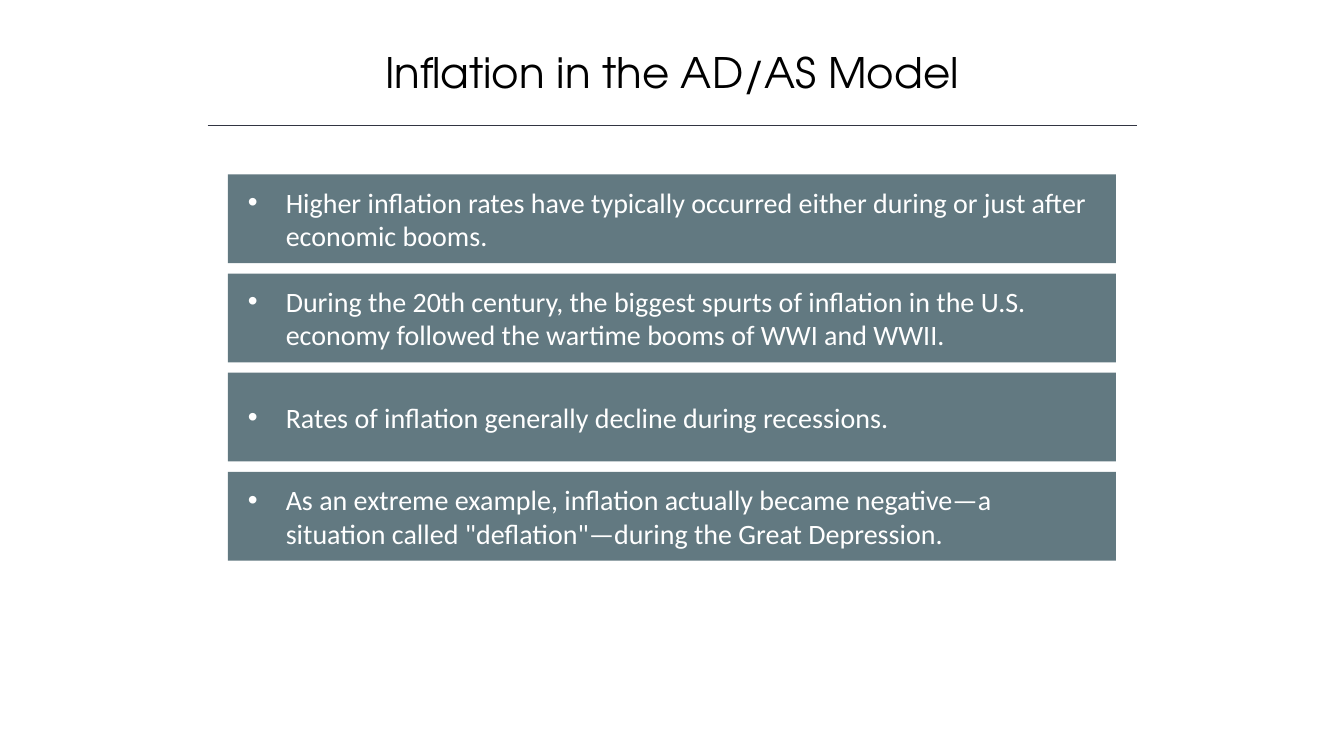
from lxml.etree import SubElement
from pptx import Presentation
from pptx.dml.color import RGBColor
from pptx.enum.shapes import MSO_CONNECTOR, MSO_SHAPE
from pptx.enum.text import MSO_ANCHOR, PP_ALIGN
from pptx.oxml.ns import qn
from pptx.util import Pt

COLORS = {"title": "000000", "rule": "323542", "bar": "627981", "bar_text": "FFFFFF"}

POINTS = [
    "Higher inflation rates have typically occurred either during or just after economic booms.",
    "During the 20th century, the biggest spurts of inflation in the U.S. economy "
    "followed the wartime booms of WWI and WWII.",
    "Rates of inflation generally decline during recessions.",
    "As an extreme example, inflation actually became negative—a situation called "
    "\"deflation\"—during the Great Depression.",
]

BAR_LEFT, BAR_TOP, BAR_WIDTH, BAR_HEIGHT = 162.7, 124.6, 634.3, 63.4
BAR_PITCH = 70.8
BULLET_INDENT = 27


def color(name):
    return RGBColor.from_string(COLORS[name])


def write_text(box, text, *, font, size, fill, align, anchor, insets):
    """Fill a box with one formatted paragraph; insets are left, top, right, bottom."""
    frame = box.text_frame
    frame.word_wrap = True
    frame.vertical_anchor = anchor
    frame.margin_left, frame.margin_top, frame.margin_right, frame.margin_bottom = map(Pt, insets)
    para = frame.paragraphs[0]
    para.alignment = align
    span = para.add_run()
    span.text = text
    span.font.name = font
    span.font.size = Pt(size)
    span.font.color.rgb = color(fill)
    return para


def add_bullet(para):
    properties = para._p.get_or_add_pPr()
    properties.set("marL", str(Pt(BULLET_INDENT)))
    properties.set("indent", str(-Pt(BULLET_INDENT)))
    SubElement(properties, qn("a:buFont"), typeface="Arial")
    SubElement(properties, qn("a:buChar"), char="•")


def set_title(page, text):
    title = page.shapes.title
    title.left, title.top, title.width, title.height = Pt(123.8), Pt(29.5), Pt(712.8), Pt(43.9)
    write_text(title, text, font="TeX Gyre Adventor", size=30, fill="title",
               align=PP_ALIGN.CENTER, anchor=MSO_ANCHOR.TOP, insets=(3.6, 3.6, 3.6, 3.6))


def add_rule(page, left, right, top):
    rule = page.shapes.add_connector(MSO_CONNECTOR.STRAIGHT, Pt(left), Pt(top), Pt(right), Pt(top))
    rule.line.color.rgb = color("rule")
    rule.line.width = Pt(1)
    SubElement(rule._element.spPr, qn("a:effectLst"))


def add_bar(page, text, top):
    bar = page.shapes.add_shape(MSO_SHAPE.RECTANGLE, Pt(BAR_LEFT), Pt(top),
                                Pt(BAR_WIDTH), Pt(BAR_HEIGHT))
    bar.shadow.inherit = False
    bar.fill.solid()
    bar.fill.fore_color.rgb = color("bar")
    bar.line.fill.background()
    para = write_text(bar, text, font="Calibri", size=20, fill="bar_text",
                      align=PP_ALIGN.LEFT, anchor=MSO_ANCHOR.MIDDLE, insets=(14.4, 3.6, 20, 3.6))
    add_bullet(para)


def main():
    deck = Presentation()
    deck.slide_width, deck.slide_height = Pt(960), Pt(540)
    page = deck.slides.add_slide(deck.slide_layouts.get_by_name("Title Only"))

    # Heading
    set_title(page, "Inflation in the AD/AS Model")
    add_rule(page, left=148.3, right=812.2, top=89.5)

    # Stacked bars, one per point
    for row, text in enumerate(POINTS):
        add_bar(page, text, BAR_TOP + row * BAR_PITCH)

    deck.save("out.pptx")


if __name__ == "__main__":
    main()
